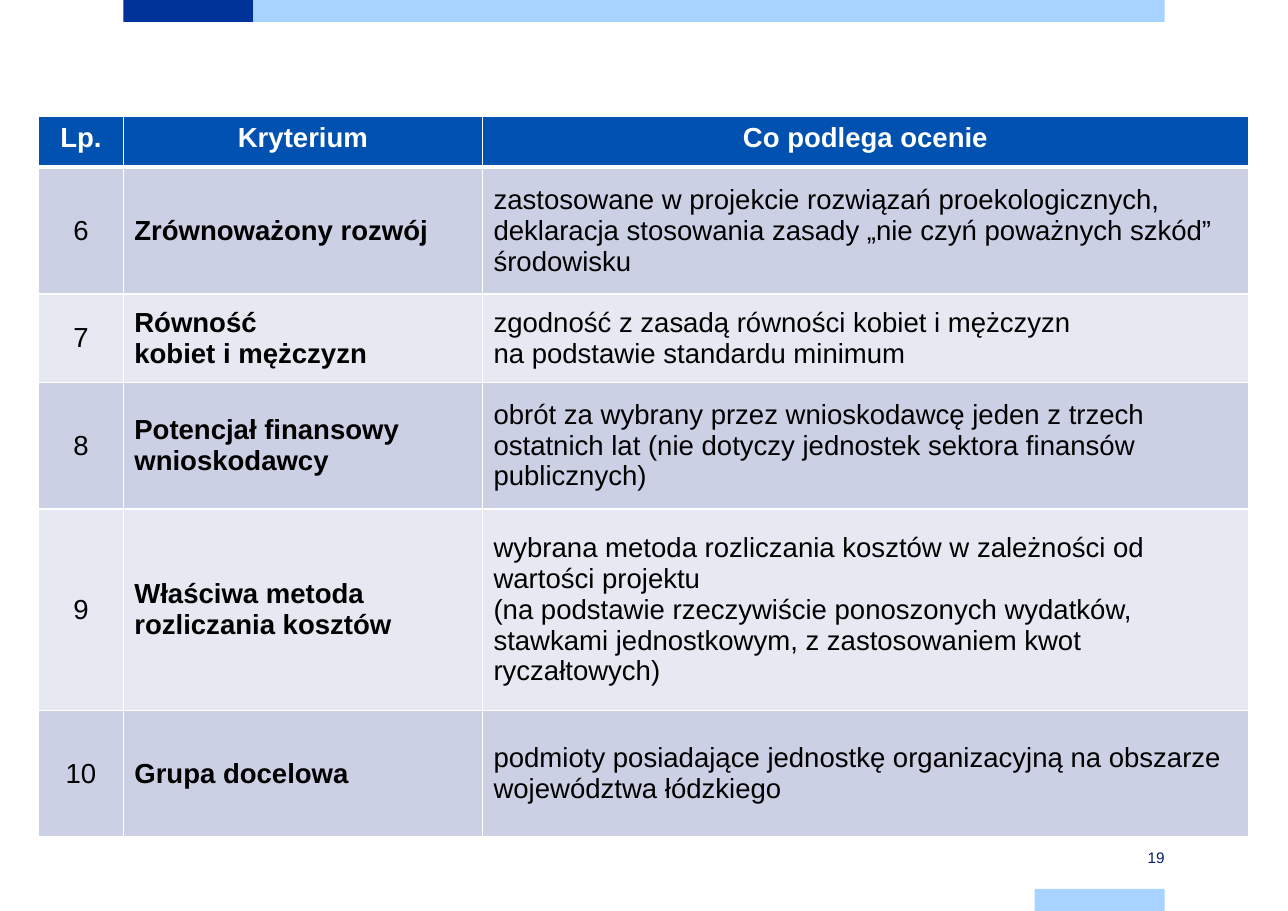
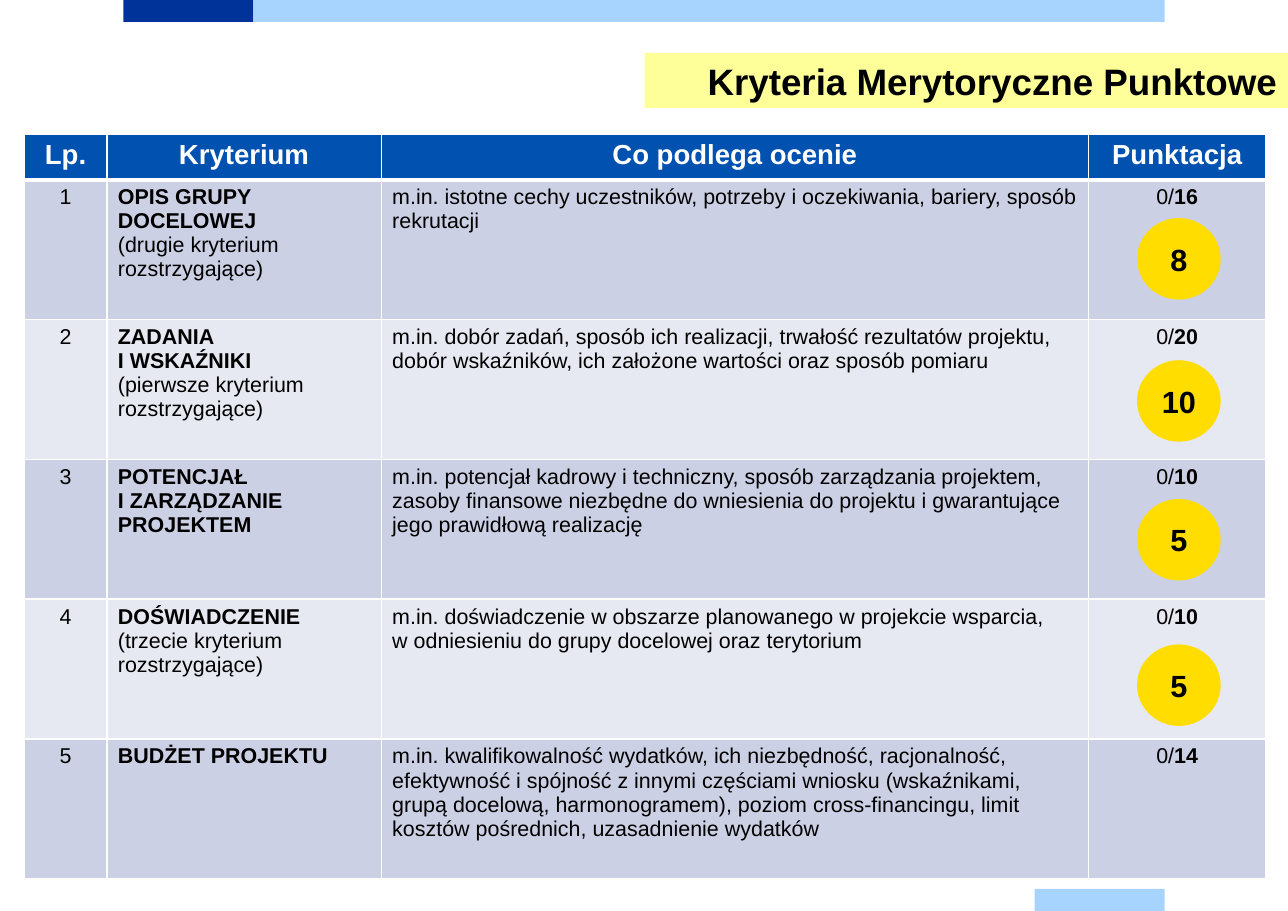
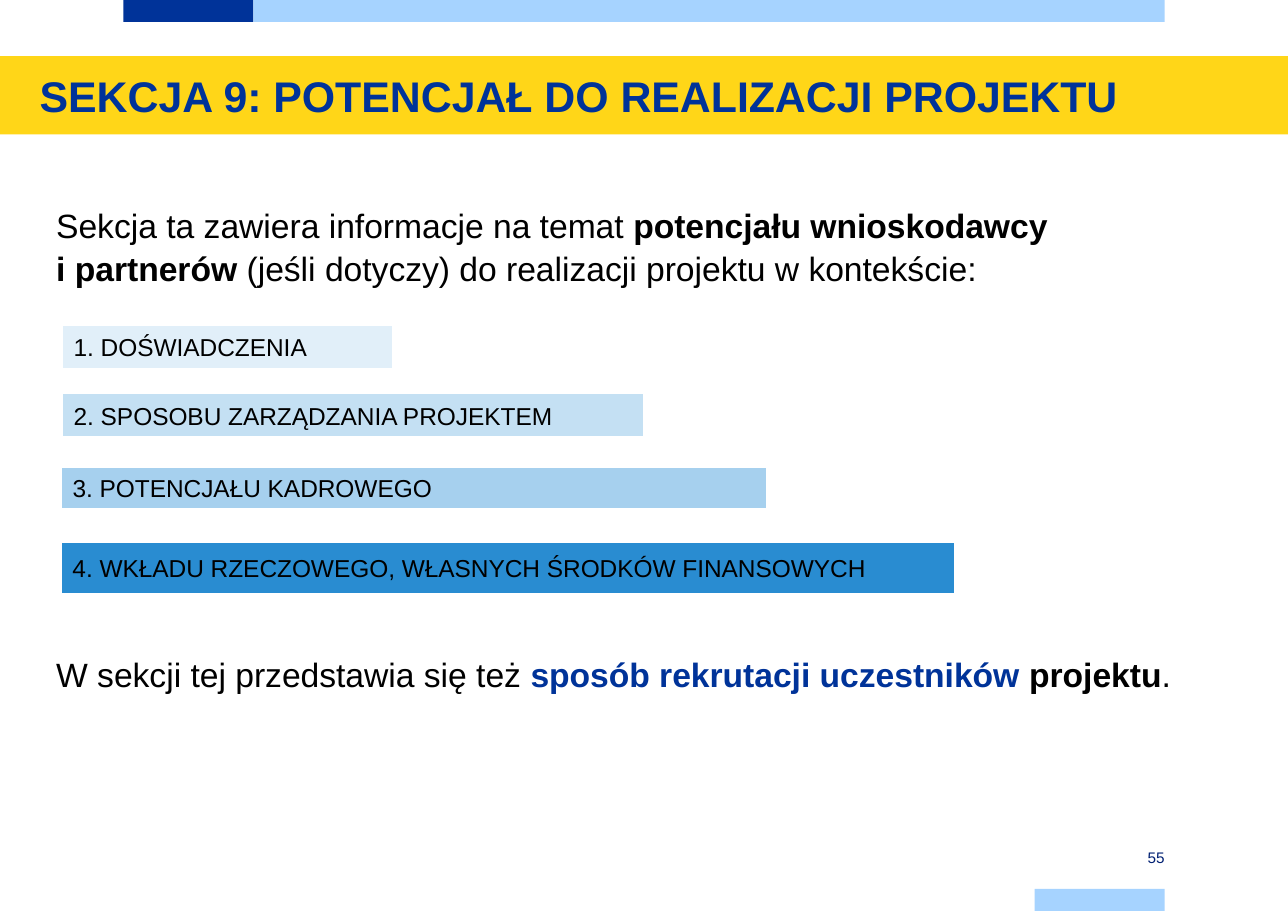
from lxml import etree
from pptx import Presentation
from pptx.dml.color import RGBColor
from pptx.enum.shapes import MSO_SHAPE
from pptx.enum.text import MSO_ANCHOR, MSO_AUTO_SIZE, PP_ALIGN
from pptx.oxml.ns import qn
from pptx.util import Inches, Pt

LEFT, CENTER, RIGHT = PP_ALIGN.LEFT, PP_ALIGN.CENTER, PP_ALIGN.RIGHT
TOP, MIDDLE = MSO_ANCHOR.TOP, MSO_ANCHOR.MIDDLE
RECTANGLE, OVAL, PROCESS = MSO_SHAPE.RECTANGLE, MSO_SHAPE.OVAL, MSO_SHAPE.FLOWCHART_PROCESS
NO_AUTOFIT = MSO_AUTO_SIZE.NONE
TITLE_AND_BODY, TITLE_ONLY, BLANK = 1, 5, 6

FONT = "Arial"
COLORS = {
    "black": "000000", "white": "FFFFFF", "navy": "003399", "sky": "A6D3FF",
    "number": "002073", "header": "0051B0", "odd_row": "CCD0E4", "even_row": "E7E9F2",
    "pale_yellow": "FFFF99", "yellow": "FFD618", "badge": "FFDD00",
    "step_1": "E1EFF9", "step_2": "C4E0F3", "step_3": "A6D0EE", "step_4": "298CD1",
}


def color(name):
    return RGBColor.from_string(COLORS[name])


def write(paragraph, text, size=18, ink="black", bold=False, align=LEFT):
    """Append text to a paragraph; a newline becomes a line break."""
    paragraph.alignment = align
    for index, line in enumerate(text.split("\n")):
        if index:
            paragraph.add_line_break()
        run = paragraph.add_run()
        run.text = line
        run.font.name, run.font.size, run.font.bold = FONT, Pt(size), bold
        run.font.color.rgb = color(ink)


def set_frame(frame, anchor=MIDDLE, wrap=True, left=0.1, right=0.1):
    frame.word_wrap, frame.auto_size, frame.vertical_anchor = wrap, NO_AUTOFIT, anchor
    frame.margin_left, frame.margin_right = Inches(left), Inches(right)
    frame.margin_top = frame.margin_bottom = Inches(0.05)


def set_borders(cell, widths):
    """Give a cell white borders; widths are left, right, top, bottom in points."""
    properties = cell._tc.get_or_add_tcPr()
    for index, (side, width) in enumerate(zip("LRTB", widths)):
        line = etree.Element(qn(f"a:ln{side}"), w=str(Pt(width)))
        fill = etree.SubElement(line, qn("a:solidFill"))
        etree.SubElement(fill, qn("a:srgbClr"), val=COLORS["white"])
        properties.insert(index, line)


class Deck:
    def __init__(self):
        self.presentation = Presentation()
        self.presentation.slide_width = Inches(11.69)
        self.presentation.slide_height = Inches(8.27)
        self.slide = None

    def add_slide(self, layout):
        first = self.slide is None
        self.slide = self.presentation.slides.add_slide(self.presentation.slide_layouts[layout])
        if first:
            self.move_bands_to_master()

    def move_bands_to_master(self):
        master = self.presentation.slide_master.shapes.element
        bands = [(1.12, 0, 1.18, "navy"), (2.3, 0, 8.27, "sky"), (9.39, 8.07, 1.18, "sky")]
        for number, (left, top, width, fill) in enumerate(bands, 101):
            band = self.shape(RECTANGLE, (left, top, width, 0.2), fill)
            band.element.nvSpPr.cNvPr.set("id", str(number))
            master.append(band.element)

    def place(self, shape, box):
        shape.left, shape.top, shape.width, shape.height = map(Inches, box)

    def shape(self, kind, box, fill, text="", wrap=True, **style):
        shape = self.slide.shapes.add_shape(kind, *map(Inches, box))
        shape.shadow.inherit = False
        shape.fill.solid()
        shape.fill.fore_color.rgb = color(fill)
        shape.line.fill.background()
        if text:
            set_frame(shape.text_frame, wrap=wrap)
            write(shape.text_frame.paragraphs[0], text, **style)
        return shape

    def title(self, box, fill, text, left_margin=0.1, **style):
        title = self.slide.shapes.title
        self.place(title, box)
        title.fill.solid()
        title.fill.fore_color.rgb = color(fill)
        set_frame(title.text_frame, left=left_margin)
        write(title.text_frame.paragraphs[0], text, bold=True, **style)

    def body(self, box, paragraphs, gap, size):
        """Fill the body; each paragraph is a list of (text, format) runs."""
        body = self.slide.placeholders[1]
        self.place(body, box)
        frame = body.text_frame
        set_frame(frame, anchor=TOP)
        for index, runs in enumerate(paragraphs):
            paragraph = frame.add_paragraph() if index else frame.paragraphs[0]
            properties = paragraph._p.get_or_add_pPr()
            properties.set("marL", "0")
            properties.set("indent", "0")
            etree.SubElement(properties, qn("a:buNone"))
            paragraph.space_before = Pt(gap if index else 0)
            paragraph.line_spacing = 1.07
            for text, style in runs:
                write(paragraph, text, size=size, **style)

    def table(self, left, top, columns, heights, header, rows, size, anchor):
        """Add a table; each body cell is a list of paragraphs of (text, bold) runs."""
        frame = self.slide.shapes.add_table(
            len(heights), len(columns), Inches(left), Inches(top),
            Inches(sum(columns)), Inches(sum(heights)))
        table = frame.table
        table.horz_banding = False
        for column, width in zip(table.columns, columns):
            column.width = Inches(width)
        for row, height in zip(table.rows, heights):
            row.height = Inches(height)
        for index, name in enumerate(header):
            cell = table.cell(0, index)
            self.style_cell(cell, "header", TOP, (1, 1, 1, 3))
            write(cell.text_frame.paragraphs[0], name, ink="white", bold=True, align=CENTER)
        for number, contents in enumerate(rows, 1):
            fill = "odd_row" if number % 2 else "even_row"
            for index, paragraphs in enumerate(contents):
                cell = table.cell(number, index)
                self.style_cell(cell, fill, anchor, (1, 1, 3 if number == 1 else 1, 1))
                align = CENTER if index in (0, 3) else LEFT
                for position, runs in enumerate(paragraphs):
                    text_frame = cell.text_frame
                    paragraph = text_frame.add_paragraph() if position else text_frame.paragraphs[0]
                    for text, bold in runs:
                        write(paragraph, text, size=size, bold=bold, align=align)

    def style_cell(self, cell, fill, anchor, borders):
        cell.fill.solid()
        cell.fill.fore_color.rgb = color(fill)
        cell.vertical_anchor = anchor
        set_borders(cell, borders)

    def page_number(self, number):
        box = self.slide.shapes.add_textbox(*map(Inches, (9.39, 7.68, 1.18, 0.2)))
        set_frame(box.text_frame, left=0, right=0)
        write(box.text_frame.paragraphs[0], str(number), size=10, ink="number", align=RIGHT)


def formal_criteria_slide(deck):
    criteria = [
        ("Zrównoważony rozwój",
         "zastosowane w projekcie rozwiązań proekologicznych, deklaracja stosowania zasady "
         "„nie czyń poważnych szkód” środowisku"),
        ("Równość\nkobiet i mężczyzn",
         "zgodność z zasadą równości kobiet i mężczyzn\nna podstawie standardu minimum"),
        ("Potencjał finansowy wnioskodawcy",
         "obrót za wybrany przez wnioskodawcę jeden z trzech ostatnich lat "
         "(nie dotyczy jednostek sektora finansów publicznych)"),
        ("Właściwa metoda rozliczania kosztów",
         "wybrana metoda rozliczania kosztów w zależności od wartości projektu\n"
         "(na podstawie rzeczywiście ponoszonych wydatków, stawkami jednostkowym, "
         "z zastosowaniem kwot ryczałtowych)"),
        ("Grupa docelowa",
         "podmioty posiadające jednostkę organizacyjną na obszarze województwa łódzkiego"),
    ]
    rows = [([[(str(number), False)]], [[(name, True)]], [[(scope, False)]])
            for number, (name, scope) in enumerate(criteria, 6)]
    deck.add_slide(BLANK)
    deck.table(0.35, 1.06, (0.77, 3.26, 6.95), (0.46, 1.15, 0.8, 1.15, 1.83, 1.15),
               ("Lp.", "Kryterium", "Co podlega ocenie"), rows, size=18, anchor=MIDDLE)
    deck.page_number(19)


def scored_criteria_slide(deck):
    criteria = [
        ("OPIS GRUPY DOCELOWEJ", "(drugie kryterium rozstrzygające)",
         "m.in. istotne cechy uczestników, potrzeby i oczekiwania, bariery, sposób rekrutacji", 16),
        ("ZADANIA\nI WSKAŹNIKI", "(pierwsze kryterium rozstrzygające)",
         "m.in. dobór zadań, sposób ich realizacji, trwałość rezultatów projektu, "
         "dobór wskaźników, ich założone wartości oraz sposób pomiaru", 20),
        ("POTENCJAŁ\nI ZARZĄDZANIE PROJEKTEM", "",
         "m.in. potencjał kadrowy i techniczny, sposób zarządzania projektem, zasoby finansowe "
         "niezbędne do wniesienia do projektu i gwarantujące jego prawidłową realizację", 10),
        ("DOŚWIADCZENIE", "(trzecie kryterium rozstrzygające)",
         "m.in. doświadczenie w obszarze planowanego w projekcie wsparcia,\n"
         "w odniesieniu do grupy docelowej oraz terytorium", 10),
        ("BUDŻET PROJEKTU", "",
         "m.in. kwalifikowalność wydatków, ich niezbędność, racjonalność, efektywność i spójność "
         "z innymi częściami wniosku (wskaźnikami, grupą docelową, harmonogramem), poziom "
         "cross-financingu, limit kosztów pośrednich, uzasadnienie wydatków", 14),
    ]
    rows = []
    for number, (name, remark, scope, points) in enumerate(criteria, 1):
        label = [[(name, True)]] + ([[(remark, False)]] if remark else [])
        rows.append(([[(str(number), False)]], label, [[(scope, False)]],
                     [[("0/", False), (str(points), True)]]))
    deck.add_slide(TITLE_ONLY)
    deck.title((5.85, 0.48, 5.84, 0.5), "pale_yellow", "Kryteria Merytoryczne Punktowe",
               size=24, align=RIGHT)
    deck.table(0.22, 1.22, (0.75, 2.49, 6.42, 1.61), [0.41] + [1.27] * 5,
               ("Lp.", "Kryterium", "Co podlega ocenie", "Punktacja"), rows, size=14, anchor=TOP)
    # Minimum scores: half of the points
    for top, criterion in zip((1.98, 3.27, 4.53, 5.85), criteria):
        deck.shape(OVAL, (10.32, top, 0.76, 0.74), "badge", str(criterion[-1] // 2),
                   wrap=False, size=20, bold=True, align=CENTER)


def potential_slide(deck):
    deck.add_slide(TITLE_AND_BODY)
    deck.title((0, 0.51, 11.69, 0.71), "yellow", "SEKCJA 9: POTENCJAŁ DO REALIZACJI PROJEKTU",
               left_margin=0.36, size=28, ink="navy")
    deck.body((0.41, 1.78, 10.46, 4.8), [
        [("Sekcja ta zawiera informacje na temat ", {}),
         ("potencjału wnioskodawcy\ni partnerów ", {"bold": True}),
         ("(jeśli dotyczy) do realizacji projektu w kontekście:", {})],
        [("W sekcji tej przedstawia się też ", {}),
         ("sposób rekrutacji uczestników ", {"bold": True, "ink": "navy"}),
         ("projektu", {"bold": True}), (".", {})],
    ], gap=237, size=22)
    # Growing bars
    steps = [
        (0.57, 2.96, 2.99, 0.38, "DOŚWIADCZENIA"),
        (0.57, 3.58, 5.27, 0.38, "SPOSOBU ZARZĄDZANIA PROJEKTEM"),
        (0.56, 4.25, 6.39, 0.36, "POTENCJAŁU KADROWEGO"),
        (0.56, 4.93, 8.1, 0.45, "WKŁADU RZECZOWEGO, WŁASNYCH ŚRODKÓW FINANSOWYCH"),
    ]
    for number, (*box, text) in enumerate(steps, 1):
        deck.shape(PROCESS, box, f"step_{number}", f"{number}. {text}", size=16)
    deck.page_number(55)


def main():
    deck = Deck()
    formal_criteria_slide(deck)
    scored_criteria_slide(deck)
    potential_slide(deck)
    deck.presentation.save("out.pptx")


if __name__ == "__main__":
    main()
